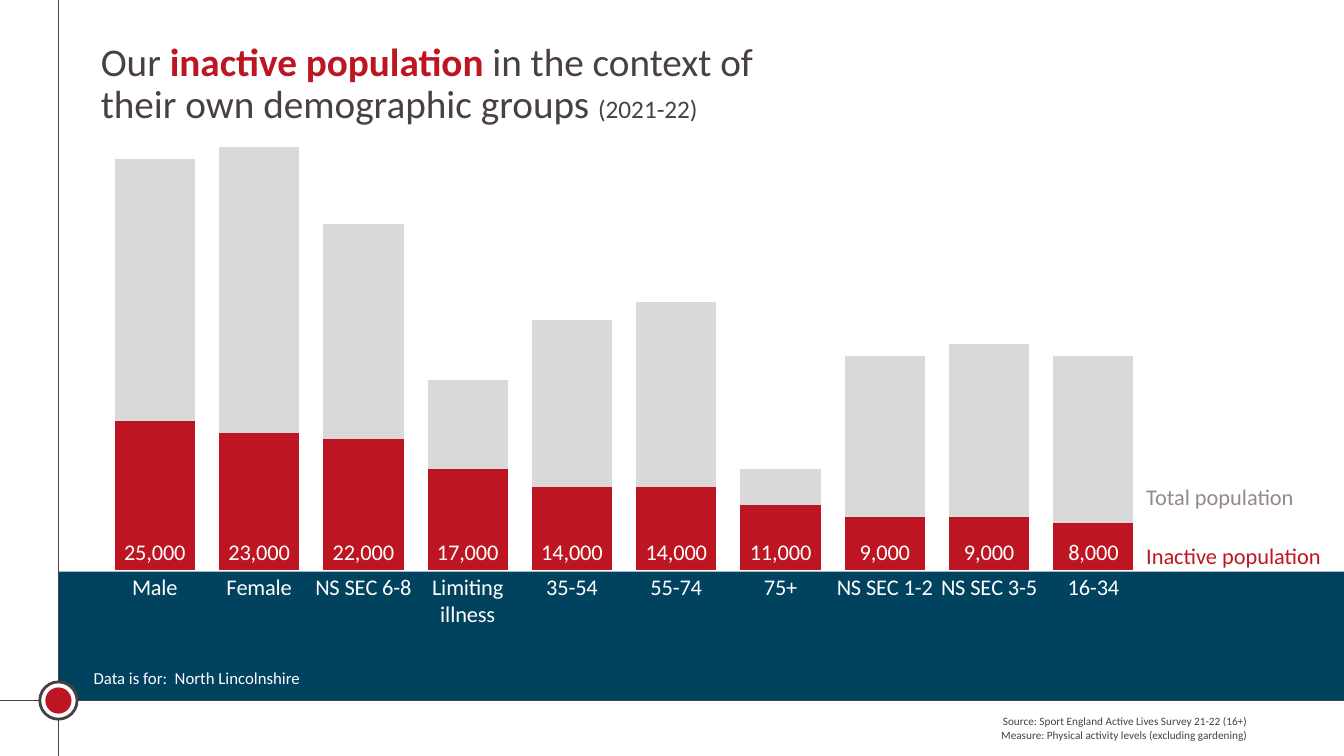
import pptx
import pptx.chart.data
import pptx.dml.color
import pptx.enum.chart
import pptx.enum.shapes
import pptx.enum.text
import pptx.oxml
import pptx.oxml.ns
import pptx.util
from pptx.util import Inches

RGBColor = pptx.dml.color.RGBColor
RED = RGBColor(0xBD, 0x16, 0x22)
NAVY = RGBColor(0x01, 0x42, 0x5F)
CHARCOAL = RGBColor(0x48, 0x40, 0x43)
TAUPE = RGBColor(0x95, 0x88, 0x8D)
SILVER = RGBColor(0xD9, 0xD9, 0xD9)
WHITE = RGBColor(0xFF, 0xFF, 0xFF)
FONT = "Calibri"
SLIDE_WIDTH, SLIDE_HEIGHT = 13.33, 7.5

INACTIVE_AND_REST = {
    "Male": (25000, 44000),
    "Female": (23000, 48000),
    "NS SEC 6-8": (22000, 36000),
    "Limiting illness": (17000, 15000),
    "35-54": (14000, 28000),
    "55-74": (14000, 31000),
    "75+": (11000, 6000),
    "NS SEC 1-2": (9000, 27000),
    "NS SEC 3-5": (9000, 29000),
    "16-34": (8000, 28000),
}


def set_font(font, size, color):
    """Apply the slide's typeface with a size and colour."""
    font.name = FONT
    font.size = pptx.util.Pt(size)
    font.color.rgb = color


def add_filled(slide, kind, left, top, width, height, fill, outline=None):
    """Add a flat shape, outlined at 2 pt when an outline colour is given."""
    shape = slide.shapes.add_shape(
        kind, Inches(left), Inches(top), Inches(width), Inches(height))
    shape.shadow.inherit = False
    shape.fill.solid()
    shape.fill.fore_color.rgb = fill
    if outline is None:
        shape.line.fill.background()
    else:
        shape.line.color.rgb = outline
        shape.line.width = pptx.util.Pt(2)


def add_rule(slide, x1, y1, x2, y2):
    """Add a thin charcoal line."""
    rule = slide.shapes.add_connector(
        pptx.enum.shapes.MSO_CONNECTOR.STRAIGHT,
        Inches(x1), Inches(y1), Inches(x2), Inches(y2))
    rule.line.color.rgb = CHARCOAL
    rule.line.width = pptx.util.Pt(0.5)
    properties = rule.element.find(pptx.oxml.ns.qn("p:spPr"))
    properties.append(pptx.oxml.parse_xml(
        f"<a:effectLst {pptx.oxml.ns.nsdecls('a')}/>"))


def add_label(slide, left, top, width, height, lines, size, color,
              align=pptx.enum.text.PP_ALIGN.LEFT, wrap=True):
    """Add a text box with one paragraph per line."""
    frame = slide.shapes.add_textbox(
        Inches(left), Inches(top), Inches(width), Inches(height)).text_frame
    frame.word_wrap = wrap
    frame.text = "\n".join(lines)
    for paragraph in frame.paragraphs:
        paragraph.alignment = align
        set_font(paragraph.font, size, color)


def add_frame(slide, axis_x, band_top, axis_y):
    """Draw the navy band, the crossing rules and the target on their crossing."""
    add_filled(slide, pptx.enum.shapes.MSO_SHAPE.RECTANGLE, axis_x, band_top,
               SLIDE_WIDTH - axis_x, axis_y - band_top, NAVY)
    add_rule(slide, axis_x, 0, axis_x, SLIDE_HEIGHT)
    add_rule(slide, 0, axis_y, SLIDE_WIDTH, axis_y)
    for diameter, fill, outline in ((0.37, WHITE, CHARCOAL), (0.26, RED, None)):
        add_filled(slide, pptx.enum.shapes.MSO_SHAPE.OVAL,
                   axis_x - diameter / 2, axis_y - diameter / 2,
                   diameter, diameter, fill, outline)


def add_title(slide, left, top, width, height):
    """Fill and place the title with its highlighted words."""
    title = slide.shapes.title
    title.left, title.top = Inches(left), Inches(top)
    title.width, title.height = Inches(width), Inches(height)
    frame = title.text_frame
    frame.word_wrap = True
    frame.auto_size = pptx.enum.text.MSO_AUTO_SIZE.NONE
    frame.vertical_anchor = pptx.enum.text.MSO_ANCHOR.TOP
    paragraph = frame.paragraphs[0]
    paragraph.alignment = pptx.enum.text.PP_ALIGN.LEFT
    paragraph.line_spacing = 0.9
    paragraph.space_before = pptx.util.Pt(0)
    for text, size, color, bold in (
            ("Our ", 28, CHARCOAL, False),
            ("inactive population ", 28, RED, True),
            ("in the context of their own demographic groups ", 28, CHARCOAL, False),
            ("(2021-22)", 18, CHARCOAL, False)):
        run = paragraph.add_run()
        run.text = text
        run.font.bold = bold
        set_font(run.font, size, color)


def set_plot_area(chart, x, y, width, height):
    """Fix the inner plot area as fractions of the chart."""
    plot_area = chart.element.find(".//" + pptx.oxml.ns.qn("c:plotArea"))
    for old in plot_area.findall(pptx.oxml.ns.qn("c:layout")):
        plot_area.remove(old)
    plot_area.insert(0, pptx.oxml.parse_xml(
        f"<c:layout {pptx.oxml.ns.nsdecls('c')}><c:manualLayout>"
        '<c:layoutTarget val="inner"/><c:xMode val="edge"/><c:yMode val="edge"/>'
        f'<c:x val="{x}"/><c:y val="{y}"/><c:w val="{width}"/><c:h val="{height}"/>'
        "</c:manualLayout></c:layout>"))


def add_population_chart(slide, left, top, width, height):
    """Add the stacked columns of inactive and remaining population."""
    data = pptx.chart.data.CategoryChartData()
    data.categories = list(INACTIVE_AND_REST)
    inactive_values, rest_values = zip(*INACTIVE_AND_REST.values())
    data.add_series("Series 1", inactive_values)
    data.add_series("Series 2", rest_values)
    chart = slide.shapes.add_chart(
        pptx.enum.chart.XL_CHART_TYPE.COLUMN_STACKED,
        Inches(left), Inches(top), Inches(width), Inches(height), data).chart
    chart.has_legend = False
    chart.has_title = False
    set_font(chart.font, 16, WHITE)
    set_plot_area(chart, 0.036, 0.03, 0.85, 0.808)

    groups = chart.category_axis
    groups.major_tick_mark = pptx.enum.chart.XL_TICK_MARK.NONE
    groups.format.line.fill.background()
    set_font(groups.tick_labels.font, 16, WHITE)
    people = chart.value_axis
    people.visible = False
    people.has_major_gridlines = False
    people.minimum_scale, people.maximum_scale = 0, 80000

    plot = chart.plots[0]
    plot.vary_by_categories = False
    plot.gap_width, plot.overlap = 30, 100
    for series, color in zip(plot.series, (RED, SILVER)):
        series.format.fill.solid()
        series.format.fill.fore_color.rgb = color
    counts = plot.series[0].data_labels
    counts.show_value = True
    counts.position = pptx.enum.chart.XL_LABEL_POSITION.INSIDE_BASE
    counts.number_format = "#,##0"
    counts.number_format_is_linked = False
    set_font(counts.font, 16, WHITE)


def add_key(slide, left, top, step):
    """Add the two series names beside the columns."""
    for row, (name, color) in enumerate(
            (("Total population", TAUPE), ("Inactive population", RED))):
        add_label(slide, left, top + row * step, 1.94, 0.37,
                  [name], 16, color, wrap=False)


def add_notes(slide, left, right, axis_y):
    """Add the area name above the lower rule and the source below it."""
    add_label(slide, left, axis_y - 0.37, 3.63, 0.3,
              ["Data is for:  North Lincolnshire"], 12, WHITE)
    add_label(slide, right - 6.47, axis_y + 0.09, 6.47, 0.37,
              ["Source: Sport England Active Lives Survey 21-22 (16+)",
               "Measure: Physical activity levels (excluding gardening)"],
              8, CHARCOAL, pptx.enum.text.PP_ALIGN.RIGHT)


def main():
    """Build and save the slide."""
    deck = pptx.Presentation()
    deck.slide_width = Inches(SLIDE_WIDTH)
    deck.slide_height = Inches(SLIDE_HEIGHT)
    slide = deck.slides.add_slide(deck.slide_layouts.get_by_name("Title Only"))
    axis_x, axis_y = 0.58, 6.95
    add_frame(slide, axis_x, 5.67, axis_y)
    add_notes(slide, 0.83, 12.47, axis_y)
    add_population_chart(slide, axis_x, 0.75, 12.17, 5.86)
    add_key(slide, 11.27, 4.74, 0.59)
    add_title(slide, 0.9, 0.37, 7.15, 2.1)
    deck.save("out.pptx")


if __name__ == "__main__":
    main()
